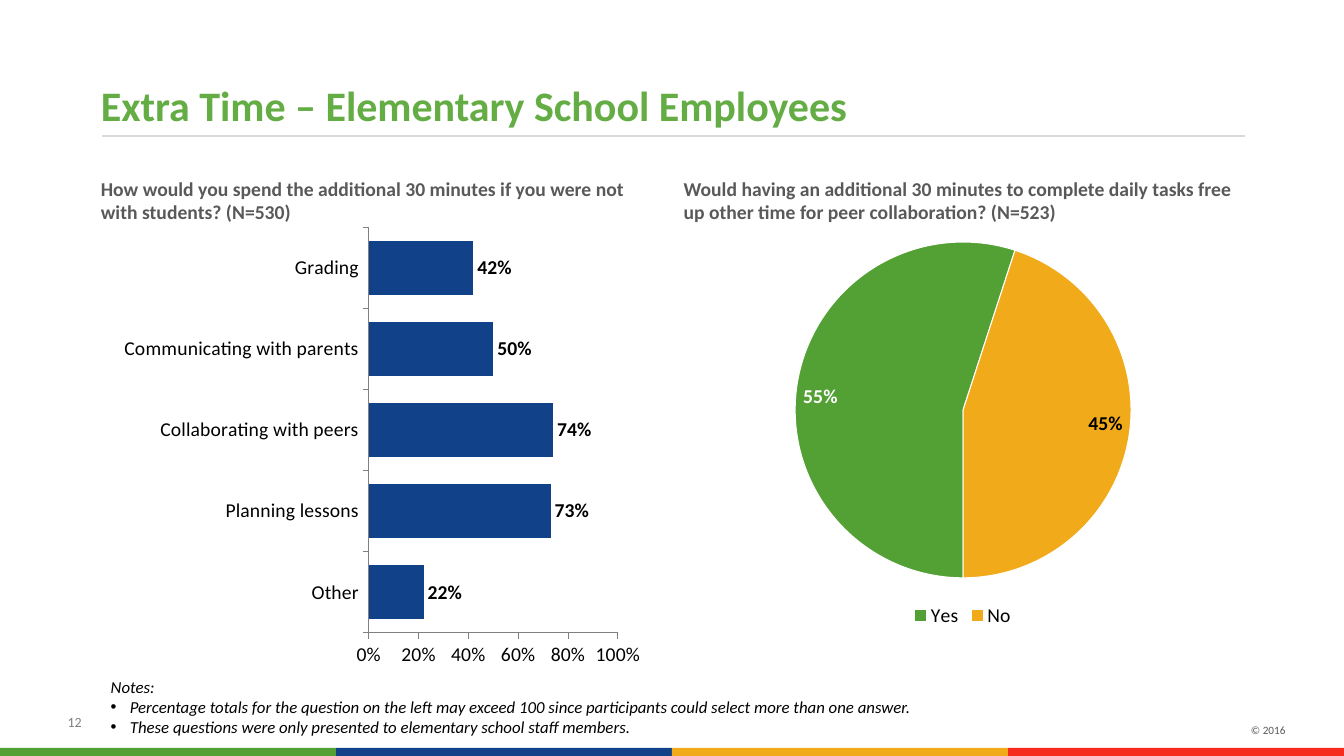
from lxml.etree import SubElement
from pptx import Presentation
from pptx.chart.data import CategoryChartData
from pptx.dml.color import RGBColor
from pptx.enum.chart import XL_CHART_TYPE, XL_LABEL_POSITION, XL_LEGEND_POSITION, XL_TICK_MARK
from pptx.enum.shapes import MSO_CONNECTOR, MSO_SHAPE
from pptx.enum.text import MSO_ANCHOR, PP_ALIGN
from pptx.oxml import parse_xml
from pptx.oxml.ns import nsdecls, qn
from pptx.util import Inches, Pt

# Content
COLORS = {
    "green": "53A035", "blue": "114188", "gold": "F1AA19", "red": "F72B1D",
    "title": "63AD44", "question": "595959", "rule": "D9D9D9", "axis": "808080",
    "copyright": "585858", "black": "000000", "white": "FFFFFF",
}
FONT = "Calibri"
TITLE = "Extra Time – Elementary School Employees"
QUESTIONS = [
    (1, "How would you spend the additional 30 minutes if you were not with students? (N=530)"),
    (6.78, "Would having an additional 30 minutes to complete daily tasks free up other time "
           "for peer collaboration? (N=523)"),
]
ACTIVITIES = {
    "Other": 0.22, "Planning lessons": 0.73, "Collaborating with peers": 0.74,
    "Communicating with parents": 0.5, "Grading": 0.42,
}
ANSWERS = {"Yes": 0.55, "No": 0.45}
ANSWER_COLORS = ["green", "gold"]
NOTES = [
    "Notes:",
    "Percentage totals for the question on the left may exceed 100 since participants "
    "could select more than one answer.",
    "These questions were only presented to elementary school staff members.",
]
STRIPE = ["green", "blue", "gold", "red"]

deck = Presentation()
deck.slide_width, deck.slide_height = Inches(13.33), Inches(7.5)
page = deck.slides.add_slide(deck.slide_layouts[6])


def color(name):
    return RGBColor.from_string(COLORS[name])


def style(font, size, name="black", bold=False, italic=False):
    font.name, font.size, font.bold, font.italic = FONT, Pt(size), bold, italic
    font.color.rgb = color(name)


def add_text(paragraphs, place, size, name="black", bold=False, italic=False,
             align=PP_ALIGN.LEFT, anchor=MSO_ANCHOR.TOP, inset=0, bullets_from=None):
    box = page.shapes.add_textbox(*map(Inches, place))
    frame = box.text_frame
    frame.word_wrap, frame.vertical_anchor = True, anchor
    frame.margin_left = frame.margin_right = Inches(inset)
    frame.margin_top = frame.margin_bottom = Inches(inset / 2)
    for index, text in enumerate(paragraphs):
        para = frame.add_paragraph() if index else frame.paragraphs[0]
        para.alignment = align
        if bullets_from is not None and index >= bullets_from:
            properties = para._p.get_or_add_pPr()
            properties.set("marL", str(Inches(0.19)))
            properties.set("indent", str(Inches(-0.19)))
            SubElement(properties, qn("a:buFont")).set("typeface", "Arial")
            SubElement(properties, qn("a:buChar")).set("char", "•")
        span = para.add_run()
        span.text = text
        style(span.font, size, name, bold, italic)


def add_chart(kind, values, place, plot_place):
    data = CategoryChartData(number_format="0%")
    data.categories = list(values)
    data.add_series("Series 1", list(values.values()))
    chart = page.shapes.add_chart(kind, *map(Inches, place), data).chart
    chart.has_title = chart.has_legend = False
    style(chart.font, 14)
    # Fix the inner plot area as fractions of the chart
    area = chart._chartSpace.chart.plotArea
    for old in area.findall(qn("c:layout")):
        area.remove(old)
    sizes = "".join(f'<c:{key} val="{value}"/>' for key, value in zip("xywh", plot_place))
    area.insert(0, parse_xml(
        f'<c:layout {nsdecls("c")}><c:manualLayout><c:layoutTarget val="inner"/>'
        f'<c:xMode val="edge"/><c:yMode val="edge"/>{sizes}</c:manualLayout></c:layout>'))
    return chart


def label_values(series, position):
    labels = series.data_labels
    labels.show_value, labels.position = True, position
    labels.number_format, labels.number_format_is_linked = "0%", False
    style(labels.font, 14, bold=True)


# Title rule and bottom stripe
rule = page.shapes.add_connector(MSO_CONNECTOR.STRAIGHT, *map(Inches, (1.01, 1.35, 12.35, 1.35)))
rule.line.color.rgb, rule.line.width = color("rule"), Pt(2)
SubElement(rule._element.spPr, qn("a:effectLst"))
stripe_width = 13.33 / len(STRIPE)
for index, name in enumerate(STRIPE):
    band = page.shapes.add_shape(
        MSO_SHAPE.RECTANGLE, *map(Inches, (index * stripe_width, 7.42, stripe_width, 0.08)))
    band.shadow.inherit = False
    band.fill.solid()
    band.fill.fore_color.rgb = color(name)
    band.line.fill.background()

# Title, questions and footer
add_text([TITLE], (1, 0.76, 11.32, 0.56), 30, "title", bold=True, anchor=MSO_ANCHOR.MIDDLE)
for left, question in QUESTIONS:
    add_text([question], (left, 1.75, 5.55, 4.75), 14, "question", bold=True)
add_text(["12"], (0.22, 7.06, 0.59, 0.21), 10, "axis", align=PP_ALIGN.RIGHT,
         anchor=MSO_ANCHOR.MIDDLE)
add_text(["© 2016"], (12.21, 7.13, 0.64, 0.24), 8, "copyright", align=PP_ALIGN.RIGHT, inset=0.1)

# Bar chart of activities
bars = add_chart(XL_CHART_TYPE.BAR_CLUSTERED, ACTIVITIES, (0.96, 2.1, 5.54, 4.7),
                 (0.487, 0.033, 0.446, 0.856))
plot = bars.plots[0]
plot.gap_width, plot.vary_by_categories = 50, False
plot.series[0].format.fill.solid()
plot.series[0].format.fill.fore_color.rgb = color("blue")
label_values(plot.series[0], XL_LABEL_POSITION.OUTSIDE_END)
for axis in (bars.category_axis, bars.value_axis):
    axis.has_major_gridlines = False
    axis.major_tick_mark, axis.minor_tick_mark = XL_TICK_MARK.OUTSIDE, XL_TICK_MARK.NONE
    axis.format.line.color.rgb, axis.format.line.width = color("axis"), Pt(0.75)
    style(axis.tick_labels.font, 14)
scale = bars.value_axis
scale.minimum_scale, scale.maximum_scale, scale.major_unit = 0, 1, 0.2
scale.tick_labels.number_format, scale.tick_labels.number_format_is_linked = "0%", False

# Notes
add_text(NOTES, (1, 6.66, 10.56, 0.71), 12, italic=True, inset=0.1, bullets_from=1)

# Pie chart of answers, first slice starting at the bottom
pie = add_chart(XL_CHART_TYPE.PIE, ANSWERS, (7.05, 2.27, 5, 4), (0.167, 0.033, 0.667, 0.833))
pie.has_legend = True
pie.legend.position, pie.legend.include_in_layout = XL_LEGEND_POSITION.BOTTOM, False
style(pie.legend.font, 14)
slices = pie.plots[0].series[0]
label_values(slices, XL_LABEL_POSITION.INSIDE_END)
for index, name in enumerate(ANSWER_COLORS):
    part = slices.points[index].format
    part.fill.solid()
    part.fill.fore_color.rgb = color(name)
    part.line.color.rgb, part.line.width = color("white"), Pt(0.75)
yes_label = slices.points[0].data_label
style(yes_label.font, 14, "white", bold=True)
yes_label.position = XL_LABEL_POSITION.INSIDE_END
pie_element = pie._chartSpace.chart.plotArea.find(qn("c:pieChart"))
for old in pie_element.findall(qn("c:firstSliceAng")):
    pie_element.remove(old)
SubElement(pie_element, qn("c:firstSliceAng")).set("val", "180")

deck.save("out.pptx")
